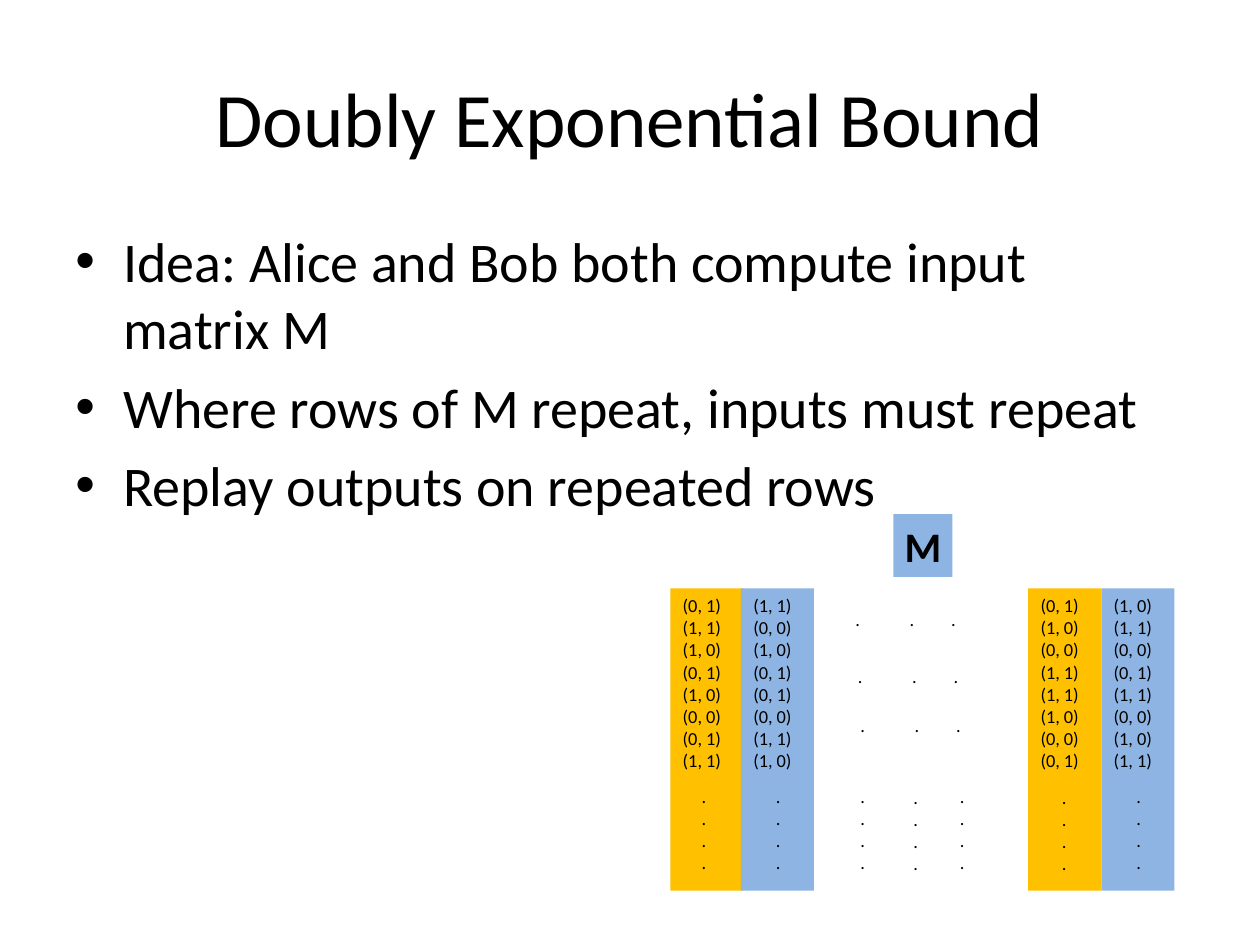
from lxml.etree import SubElement
from pptx import Presentation
from pptx.dml.color import RGBColor
from pptx.enum.shapes import MSO_SHAPE as SHAPE
from pptx.enum.text import MSO_ANCHOR as ANCHOR, PP_ALIGN as ALIGN
from pptx.oxml.ns import qn
from pptx.util import Inches, Pt

BLACK = RGBColor(0x00, 0x00, 0x00)
GOLD = RGBColor(0xFF, 0xC0, 0x00)
BLUE = RGBColor(0x8E, 0xB4, 0xE3)

TITLE = "Doubly Exponential Bound"
BULLETS = [
    "Idea: Alice and Bob both compute input matrix M",
    "Where rows of M repeat, inputs must repeat",
    "Replay outputs on repeated rows",
]
COLUMNS = [
    (5.32, GOLD, ["01", "11", "10", "01", "10", "00", "01", "11"]),
    (5.88, BLUE, ["11", "00", "10", "01", "01", "00", "11", "10"]),
    (8.16, GOLD, ["01", "10", "00", "11", "11", "10", "00", "01"]),
    (8.74, BLUE, ["10", "11", "00", "01", "11", "00", "10", "11"]),
]
COLUMN_TOP, COLUMN_W, COLUMN_H = 4.67, 0.58, 2.4
VERTICAL_DOTS = [(5.47, 6.18), (6.06, 6.18), (6.73, 6.18), (7.15, 6.19),
                 (7.52, 6.18), (8.33, 6.19), (8.92, 6.18)]
ROW_DOTS = [(6.69, 4.78), (6.71, 5.23), (6.73, 5.62)]
DOT_TABS = [0.43, 0.76]


def add_text(s, lines, x, y, w, h, size=10.5, bold=False, fill=None,
             align=ALIGN.LEFT, anchor=ANCHOR.TOP, side=0.1, bullet=False, tabs=()):
    if fill is None:
        sp = s.shapes.add_textbox(Inches(x), Inches(y), Inches(w), Inches(h))
    else:
        sp = s.shapes.add_shape(SHAPE.RECTANGLE, Inches(x), Inches(y), Inches(w), Inches(h))
        sp.shadow.inherit = False
        sp.fill.solid()
        sp.fill.fore_color.rgb = fill
        sp.line.fill.background()
    tf = sp.text_frame
    tf.word_wrap = True
    tf.vertical_anchor = anchor
    tf.margin_left = tf.margin_right = Inches(side)
    for i, line in enumerate(lines):
        p = tf.paragraphs[0] if i == 0 else tf.add_paragraph()
        p.alignment = align
        pPr = p._p.get_or_add_pPr()
        if bullet:
            p.space_before = Pt(size * 0.2)
            pPr.set("marL", str(Inches(0.38)))
            pPr.set("indent", str(-Inches(0.38)))
            SubElement(pPr, qn("a:buFont"), typeface="Arial")
            SubElement(pPr, qn("a:buChar"), char="•")
        if tabs:
            tab_list = SubElement(pPr, qn("a:tabLst"))
            for tab in tabs:
                SubElement(tab_list, qn("a:tab"), pos=str(Inches(tab)), algn="l")
        r = p.add_run()
        r.text = line
        r.font.name = "Calibri"
        r.font.size = Pt(size)
        r.font.bold = bold
        r.font.color.rgb = BLACK
    return sp


prs = Presentation()
prs.slide_width, prs.slide_height = Inches(10), Inches(7.5)
s = prs.slides.add_slide(prs.slide_layouts[6])

add_text(s, [TITLE], 0.5, 0.3, 9, 1.25, size=44, align=ALIGN.CENTER, anchor=ANCHOR.MIDDLE)
add_text(s, BULLETS, 0.5, 1.75, 9, 4.95, size=32, bullet=True)

for x, color, pairs in COLUMNS:
    cells = [f"({a}, {b})" for a, b in pairs]
    add_text(s, cells, x, COLUMN_TOP, COLUMN_W, COLUMN_H, fill=color)
for x, y in VERTICAL_DOTS:
    add_text(s, ["."] * 4, x, y, 0.24, 0.81)
for x, y in ROW_DOTS:
    add_text(s, [".\t.\t."], x, y, 1.11, 0.28, tabs=DOT_TABS)
add_text(s, ["M"], 7.09, 4.08, 0.47, 0.5, size=24, bold=True, fill=BLUE,
         align=ALIGN.CENTER, side=0)

prs.save("out.pptx")
